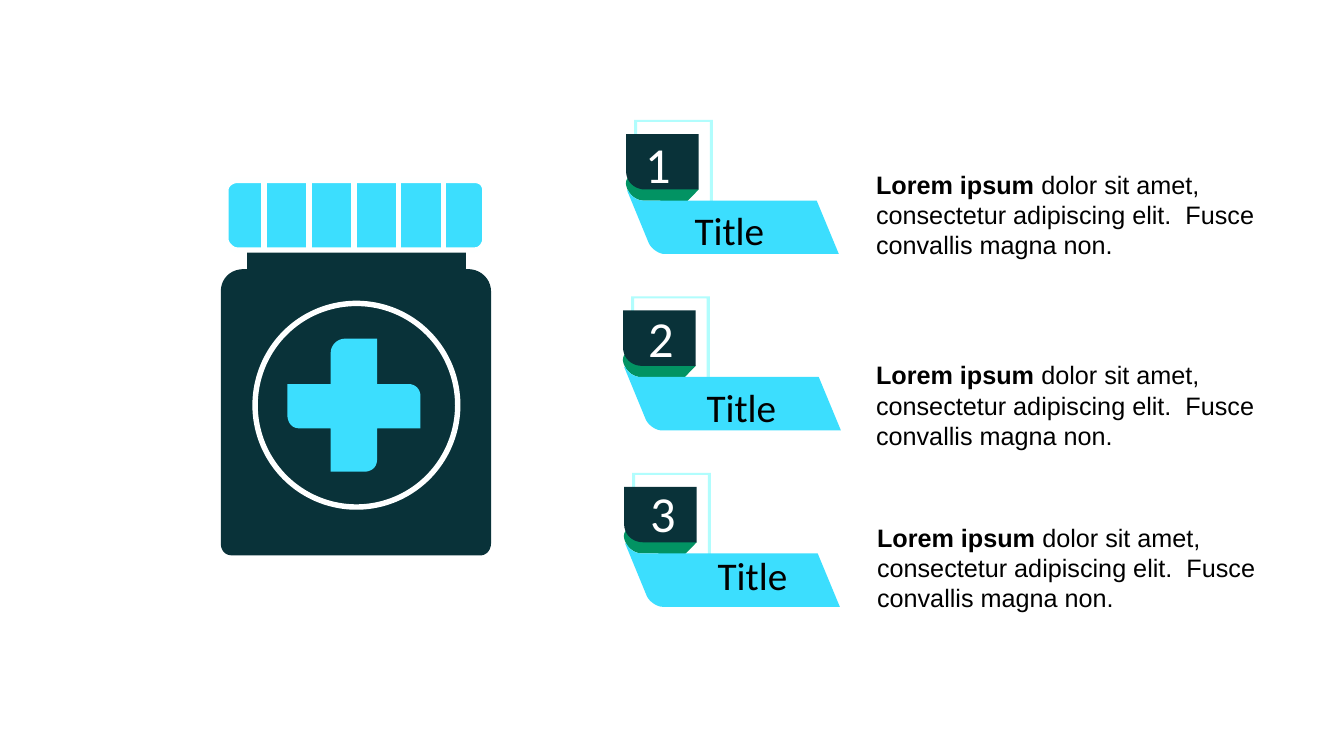
"""Build a slide with a medicine jar beside three numbered title ribbons."""
from lxml import etree
from pptx import Presentation
from pptx.dml.color import RGBColor
from pptx.enum.shapes import MSO_CONNECTOR, MSO_SHAPE
from pptx.enum.text import MSO_AUTO_SIZE
from pptx.oxml.ns import qn
from pptx.util import Inches, Pt

STRAIGHT = MSO_CONNECTOR.STRAIGHT
OVAL = MSO_SHAPE.OVAL
GROW = MSO_AUTO_SIZE.SHAPE_TO_FIT_TEXT

NAVY = RGBColor(0x09, 0x32, 0x39)
CYAN = RGBColor(0x3C, 0xDE, 0xFE)
PALE = RGBColor(0xB1, 0xFD, 0xFD)
GREEN = RGBColor(0x02, 0x93, 0x63)
OUTLINE = RGBColor(0xFE, 0xFF, 0xFF)
WHITE = RGBColor(0xFF, 0xFF, 0xFF)
BLACK = RGBColor(0, 0, 0)
OUTLINE_WIDTH = 3.88
CURVE_STEPS = 10

LEAD = "Lorem ipsum "
BODY = "dolor sit amet, consectetur adipiscing elit.  Fusce convallis magna non."
BADGES = [
    {"number": "1", "title": "Title", "origin": (6.21, 1.33), "ribbon": 2.11,
     "number_at": (6.3, 1.27), "title_at": (6.79, 2), "body_at": (8.59, 1.63)},
    {"number": "2", "title": "Title", "origin": (6.18, 3.08), "ribbon": 2.16,
     "number_at": (6.33, 3), "title_at": (6.91, 3.75), "body_at": (8.59, 3.52)},
    {"number": "3", "title": "Title", "origin": (6.19, 4.83), "ribbon": 2.14,
     "number_at": (6.35, 4.73), "title_at": (7.02, 5.42), "body_at": (8.6, 5.13)},
]

# Outline entries hold two numbers for a corner, six for a cubic curve.
FRAME = [(0.86, 0.77), (0.83, 0.77), (0.83, -0.12), (0.11, -0.12),
         (0.11, 0.02), (0.08, 0.02), (0.08, -0.14), (0.86, -0.14)]
FOLD = [(0.17, 0.66), (0.12, 0.66, 0.05, 0.62, 0.02, 0.56), (0.01, 0.54),
        (-0.02, 0.47, 0.01, 0.41, 0.08, 0.41), (0.32, 0.41), (0.41, 0.66)]
FOLD_TIP = [(0.72, 0.55), (0.34, 0.94), (0.34, 0.3)]
TILE = [(0.72, 0), (0, 0), (0, 0.37), (0, 0.47, 0.08, 0.55, 0.19, 0.55), (0.72, 0.55)]

JAR = [(4.64, 2.67), (4.62, 2.67), (4.62, 2.48), (2.45, 2.48), (2.45, 2.67),
       (2.42, 2.67), (2.28, 2.67, 2.19, 2.77, 2.19, 2.89), (2.19, 5.39),
       (2.19, 5.46, 2.23, 5.51, 2.3, 5.51), (4.77, 5.51),
       (4.82, 5.51, 4.87, 5.46, 4.87, 5.39), (4.87, 2.89),
       (4.87, 2.77, 4.77, 2.67, 4.64, 2.67)]
CAP = [(4.71, 1.79), (2.35, 1.79), (2.3, 1.79, 2.24, 1.83, 2.24, 1.89), (2.24, 2.37),
       (2.24, 2.42, 2.3, 2.48, 2.35, 2.48), (4.71, 2.48),
       (4.77, 2.48, 4.81, 2.42, 4.81, 2.37), (4.81, 1.89),
       (4.81, 1.83, 4.77, 1.79, 4.71, 1.79)]
CROSS = [(4.05, 3.81), (3.74, 3.81), (3.74, 3.36), (3.42, 3.36),
         (3.35, 3.36, 3.28, 3.42, 3.28, 3.5), (3.28, 3.81), (2.85, 3.81), (2.85, 4.11),
         (2.85, 4.2, 2.9, 4.25, 2.97, 4.25), (3.28, 4.25), (3.28, 4.68), (3.61, 4.68),
         (3.69, 4.68, 3.74, 4.63, 3.74, 4.56), (3.74, 4.25), (4.17, 4.25), (4.17, 3.93),
         (4.17, 3.86, 4.12, 3.81, 4.05, 3.81)]
RIDGES = 5
RIDGE_LEFT, RIDGE_GAP = 2.62, 0.445
CAP_TOP, CAP_BOTTOM = 1.79, 2.48


def flatten(outline):
    """Turn corners and cubic curves into a plain list of points."""
    points = []
    for entry in outline:
        if len(entry) == 2:
            points.append(entry)
            continue
        controls = [points[-1], entry[0:2], entry[2:4], entry[4:6]]
        for step in range(1, CURVE_STEPS + 1):
            t = step / CURVE_STEPS
            weights = ((1 - t) ** 3, 3 * t * (1 - t) ** 2, 3 * t * t * (1 - t), t ** 3)
            points.append(tuple(sum(weight * control[axis]
                                    for weight, control in zip(weights, controls))
                                for axis in (0, 1)))
    return points


def draw_outline(shapes, outline, color, origin=(0, 0)):
    """Add a filled closed outline, offset by origin."""
    points = [(Inches(origin[0] + x), Inches(origin[1] + y)) for x, y in flatten(outline)]
    builder = shapes.build_freeform(*points[0])
    builder.add_line_segments(points[1:], close=True)
    shape = builder.convert_to_shape()
    shape.shadow.inherit = False
    shape.fill.solid()
    shape.fill.fore_color.rgb = color
    shape.line.fill.background()
    return shape


def style_line(line):
    """Give a line the white outline look."""
    line.color.rgb = OUTLINE
    line.width = Pt(OUTLINE_WIDTH)


def draw_badge(shapes, badge):
    """Add the frame, fold, number tile and ribbon of one badge."""
    width = badge["ribbon"]
    ribbon = [(width, 1.19), (0.38, 1.19), (0.32, 1.19, 0.24, 1.13, 0.22, 1.07),
              (0.01, 0.56), (0.02, 0.56), (0.05, 0.62, 0.11, 0.66, 0.17, 0.66),
              (width - 0.22, 0.66)]
    parts = [(FRAME, PALE), (FOLD, GREEN), (FOLD_TIP, GREEN), (TILE, NAVY), (ribbon, CYAN)]
    for outline, color in parts:
        draw_outline(shapes, outline, color, badge["origin"])


def draw_jar(shapes):
    """Add the jar, its ridged cap, and the cross in a ring."""
    draw_outline(shapes, JAR, NAVY)
    style_line(draw_outline(shapes, CAP, CYAN).line)
    for index in range(RIDGES):
        x = Inches(RIDGE_LEFT + index * RIDGE_GAP)
        ridge = shapes.add_connector(STRAIGHT, x, Inches(CAP_TOP), x, Inches(CAP_BOTTOM))
        style_line(ridge.line)
        etree.SubElement(ridge._element.spPr, qn("a:effectLst"))
    draw_outline(shapes, CROSS, CYAN)
    ring = shapes.add_shape(OVAL, Inches(2.53), Inches(3.01), Inches(2.01), Inches(2.02))
    ring.shadow.inherit = False
    ring.fill.background()
    style_line(ring.line)


def write(shapes, position, size, texts, font, points, color, wrap=True):
    """Add a text box and return the runs of its paragraph."""
    box = shapes.add_textbox(*map(Inches, position + size))
    frame = box.text_frame
    frame.word_wrap = wrap
    frame.auto_size = GROW
    para = frame.paragraphs[0]
    para.font.name = font
    para.font.size = Pt(points)
    para.font.color.rgb = color
    for text in texts:
        para.add_run().text = text
    return para.runs


def main():
    """Build and save the slide."""
    deck = Presentation()
    deck.slide_width, deck.slide_height = Inches(13.33), Inches(7.5)
    page = deck.slides.add_slide(deck.slide_layouts[6])
    badge_group = page.shapes.add_group_shape()
    for badge in BADGES:
        draw_badge(badge_group.shapes, badge)
    draw_jar(page.shapes.add_group_shape().shapes)
    for badge in BADGES:
        spans = write(page.shapes, badge["body_at"], (4.11, 1.01), [LEAD, BODY],
                      "Arial", 18, BLACK)
        spans[0].font.bold = True
        write(page.shapes, badge["number_at"], (0.46, 0.71), [badge["number"]],
              "Calibri", 36, WHITE, wrap=False)
        write(page.shapes, badge["title_at"], (1.33, 0.57), [badge["title"]],
              "Calibri", 28, BLACK)
    deck.save("out.pptx")


if __name__ == "__main__":
    main()
